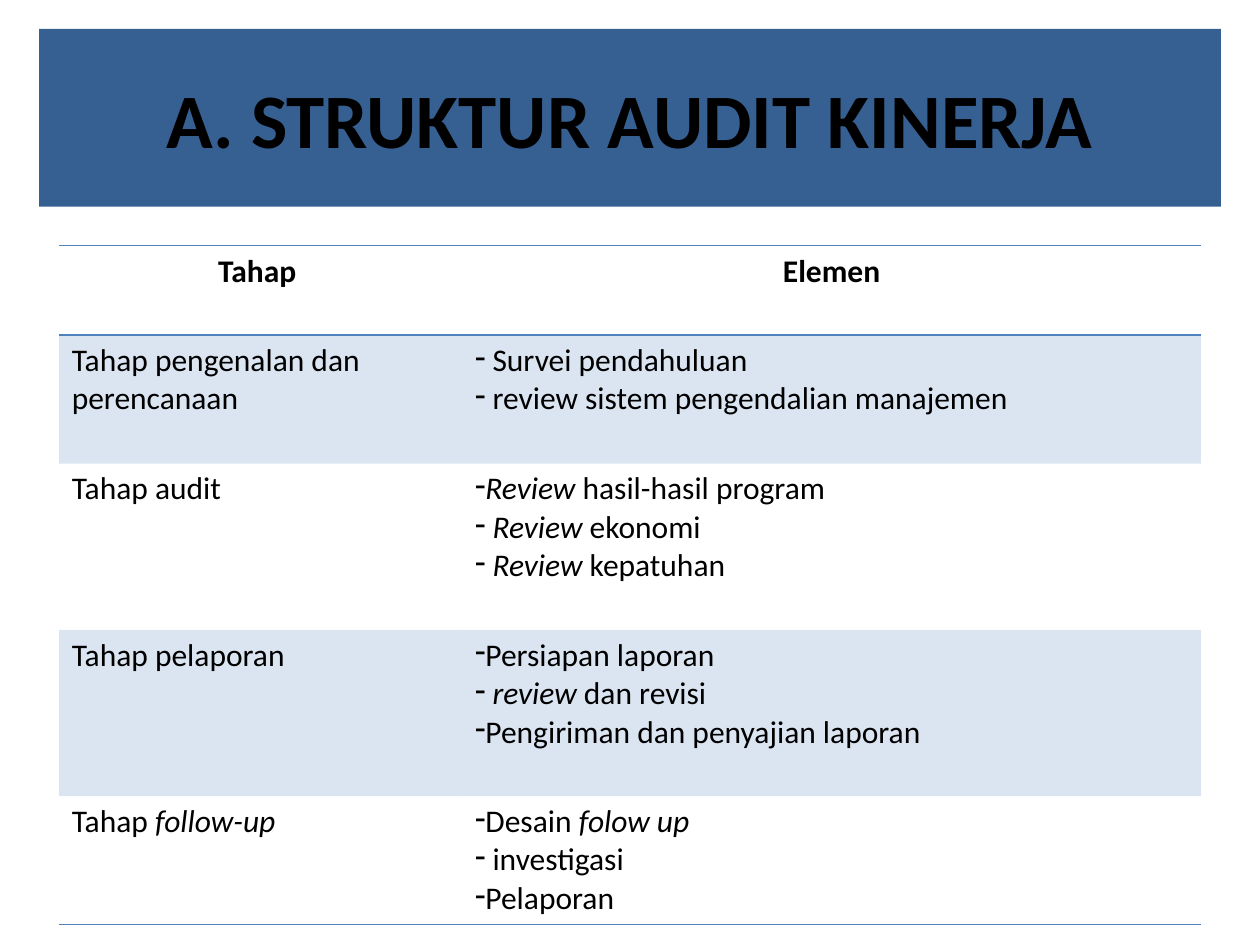
from dataclasses import dataclass

from lxml import etree
from pptx import Presentation
from pptx.dml.color import RGBColor
from pptx.enum.shapes import MSO_SHAPE
from pptx.enum.text import MSO_ANCHOR, PP_ALIGN
from pptx.oxml.ns import qn
from pptx.util import Inches, Pt

RECTANGLE = MSO_SHAPE.RECTANGLE
MIDDLE = MSO_ANCHOR.MIDDLE
CENTER, LEFT = PP_ALIGN.CENTER, PP_ALIGN.LEFT
COLORS = {"banner": "376092", "accent": "4F81BD", "text": "000000"}
FONT = "Calibri"
NO_GRID_STYLE = "{2D5ABB26-0587-4C30-8999-92F81FD0307C}"
COLUMN_WIDTHS = (3.2, 5.86)


@dataclass(frozen=True)
class Stage:
    name: str
    elements: tuple[str, ...]
    height: float
    shaded: bool = False
    header: bool = False
    borders: tuple[str, ...] = ()


STAGES = (
    Stage("Tahap ", ("Elemen",), 0.71, header=True, borders=("lnT", "lnB")),
    Stage(
        "Tahap pengenalan dan perencanaan",
        (" Survei pendahuluan", " review sistem pengendalian manajemen"),
        1.02,
        shaded=True,
    ),
    Stage(
        "Tahap audit",
        ("*Review* hasil-hasil program", " *Review* ekonomi", " *Review* kepatuhan"),
        1.32,
    ),
    Stage(
        "Tahap pelaporan",
        ("Persiapan laporan", " *review* dan revisi", "Pengiriman dan penyajian laporan"),
        1.32,
        shaded=True,
    ),
    Stage(
        "Tahap *follow-up*",
        ("Desain *folow up*", " investigasi", "Pelaporan"),
        1.02,
        borders=("lnB",),
    ),
)


def write_paragraph(paragraph, text: str, size: int, bold: bool, alignment) -> None:
    """Write text into a paragraph, with asterisks around italic words."""
    paragraph.alignment = alignment
    font = paragraph.font
    font.name, font.size, font.bold = FONT, Pt(size), bold
    font.color.rgb = RGBColor.from_string(COLORS["text"])
    for index, part in enumerate(text.split("*")):
        if part:
            run = paragraph.add_run()
            run.text = part
            if index % 2:
                run.font.italic = True


def add_dash(paragraph) -> None:
    """Give a paragraph a dash bullet without indent."""
    properties = paragraph._p.get_or_add_pPr()
    properties.set("marL", "0")
    properties.set("indent", "0")
    bullet = etree.Element(qn("a:buChar"), char="-")
    properties.insert(0, bullet)


def style_cell(cell, stage: Stage) -> None:
    """Set the fill and the horizontal borders of a cell."""
    properties = cell._tc.get_or_add_tcPr()
    if stage.shaded:
        cell.fill.solid()
        cell.fill.fore_color.rgb = RGBColor.from_string(COLORS["accent"])
        color = properties.find(".//" + qn("a:srgbClr"))
        etree.SubElement(color, qn("a:alpha"), val="20000")
    else:
        cell.fill.background()
    for index, side in enumerate(stage.borders):
        line = etree.Element(qn(f"a:{side}"), w=str(Pt(1)))
        fill = etree.SubElement(line, qn("a:solidFill"))
        etree.SubElement(fill, qn("a:srgbClr"), val=COLORS["accent"])
        properties.insert(index, line)


def fill_cell(cell, stage: Stage, lines: tuple[str, ...], dashed: bool) -> None:
    """Write the lines of a cell and style it."""
    frame = cell.text_frame
    for index, text in enumerate(lines):
        paragraph = frame.add_paragraph() if index else frame.paragraphs[0]
        write_paragraph(paragraph, text, 18, stage.header, CENTER if stage.header else LEFT)
        if dashed:
            add_dash(paragraph)
    style_cell(cell, stage)


def add_banner(slide, title: str) -> None:
    """Draw the title banner."""
    shape = slide.shapes.add_shape(
        RECTANGLE, Inches(0.31), Inches(0.23), Inches(9.38), Inches(1.41)
    )
    shape.shadow.inherit = False
    shape.fill.solid()
    shape.fill.fore_color.rgb = RGBColor.from_string(COLORS["banner"])
    shape.line.fill.background()
    shape.text_frame.word_wrap = True
    shape.text_frame.vertical_anchor = MIDDLE
    write_paragraph(shape.text_frame.paragraphs[0], title, 44, True, CENTER)


def add_stage_table(slide, stages: tuple[Stage, ...]) -> None:
    """Draw the table of audit stages and their elements."""
    table = slide.shapes.add_table(
        len(stages),
        len(COLUMN_WIDTHS),
        Inches(0.47),
        Inches(1.95),
        Inches(sum(COLUMN_WIDTHS)),
        Inches(sum(stage.height for stage in stages)),
    ).table
    table.first_row = table.horz_banding = False
    table._tbl.tblPr.find(qn("a:tableStyleId")).text = NO_GRID_STYLE
    for column, width in zip(table.columns, COLUMN_WIDTHS):
        column.width = Inches(width)
    for row, stage in zip(table.rows, stages):
        row.height = Inches(stage.height)
        name_cell, element_cell = row.cells
        fill_cell(name_cell, stage, (stage.name,), False)
        fill_cell(element_cell, stage, stage.elements, not stage.header)


def main() -> None:
    """Build the slide and save the presentation."""
    presentation = Presentation()
    presentation.slide_width, presentation.slide_height = Inches(10), Inches(7.5)
    slide = presentation.slides.add_slide(presentation.slide_layouts[6])
    add_banner(slide, "A. STRUKTUR AUDIT KINERJA")
    add_stage_table(slide, STAGES)
    presentation.save("out.pptx")


if __name__ == "__main__":
    main()
